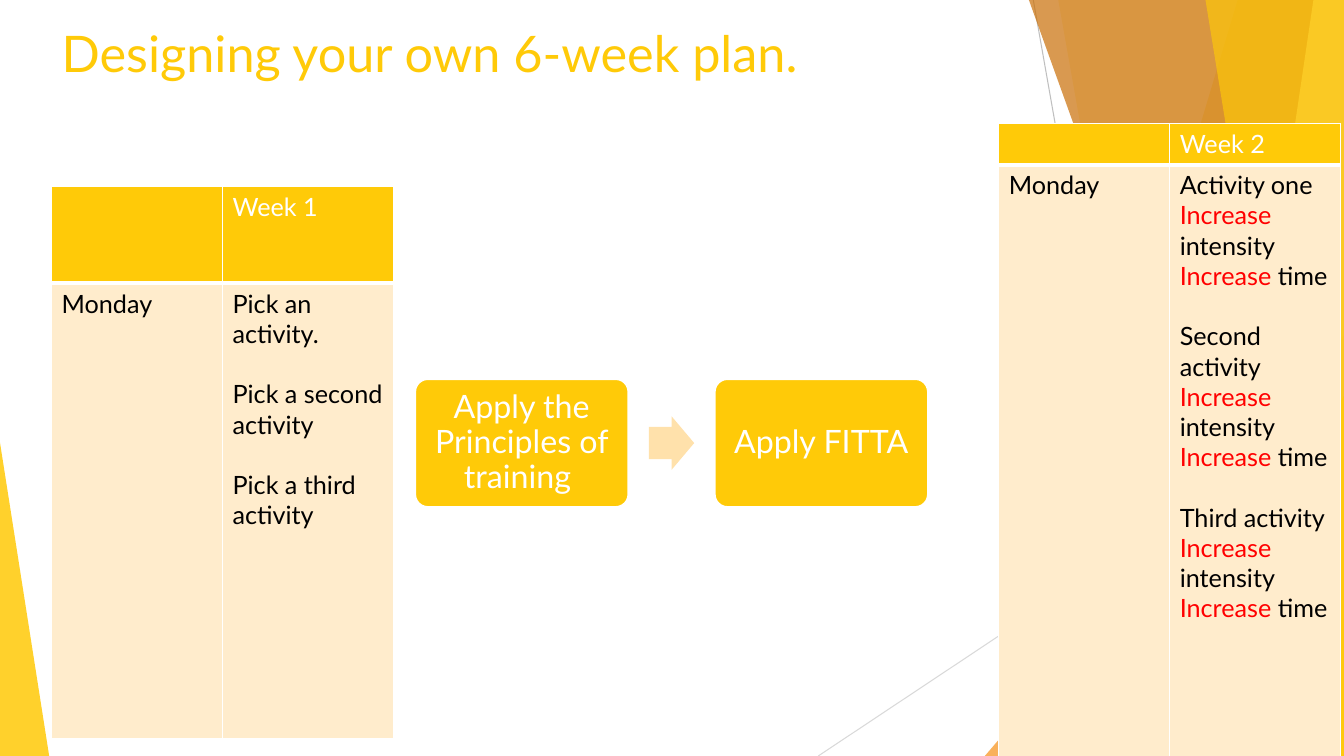
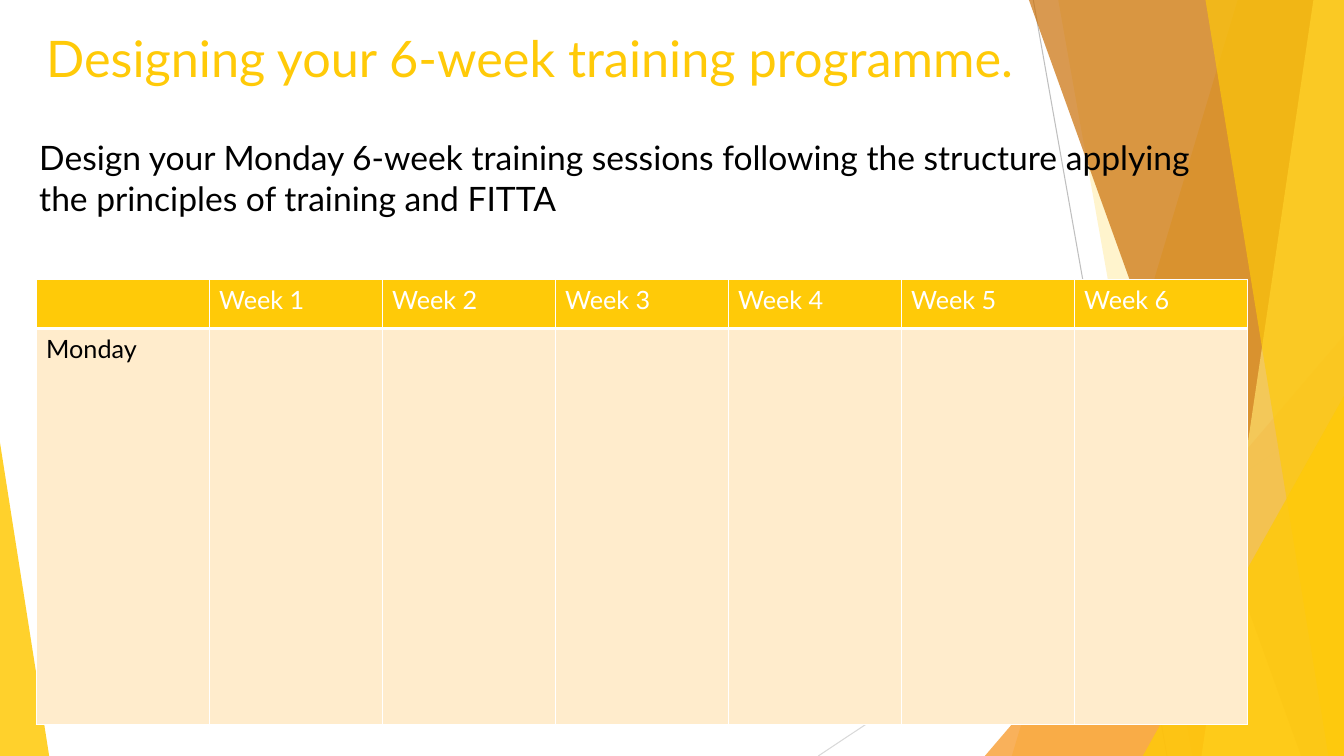
from lxml import etree
from pptx import Presentation, util as u
from pptx.dml.color import RGBColor
from pptx.enum import shapes, text
from pptx.oxml.ns import qn

Cm, Pt = u.Cm, u.Pt
WIDTH, HEIGHT = 33.87, 19.05
FONT = "Lato"
HIGHLIGHT = "Increase"
GOLD = RGBColor(0xFF, 0xCA, 0x08)
PALE_GOLD = RGBColor(0xFF, 0xDF, 0x6B)
ORANGE = RGBColor(0xF8, 0x93, 0x1D)
BROWN = RGBColor(0xCA, 0x6F, 0x06)
CREAM = RGBColor(0xFF, 0xEC, 0xCC)
PEACH = RGBColor(0xFF, 0xE1, 0xAB)
GREY = RGBColor(0xBF, 0xBF, 0xBF)
LIGHT_GREY = RGBColor(0xD9, 0xD9, 0xD9)
RED = RGBColor(0xFF, 0x00, 0x00)
BLACK = RGBColor(0x00, 0x00, 0x00)
WHITE = RGBColor(0xFF, 0xFF, 0xFF)

INCREASES = ["Increase intensity", "Increase time"]
WEEK_1 = [["Pick an activity."], ["Pick a second activity"], ["Pick a third activity"]]
WEEK_2 = [[name] + INCREASES for name in ("Activity one", "Second activity", "Third activity")]


def set_font(p, size, color):
    """Give a paragraph the deck's typeface with a size and colour."""
    p.font.name, p.font.size = FONT, Pt(size)
    p.font.color.rgb = color


def paint(shape, color, alpha=100):
    """Fill a shape with a flat colour, without outline or shadow."""
    shape.shadow.inherit = False
    shape.fill.solid()
    shape.fill.fore_color.rgb = color
    shape.line.fill.background()
    if alpha < 100:
        clr = shape.element.spPr.find(".//" + qn("a:srgbClr"))
        etree.SubElement(clr, qn("a:alpha")).set("val", str(alpha * 1000))


def add_thin_line(tree, start, end, color):
    """Draw a hairline between two points."""
    line = tree.add_connector(shapes.MSO_CONNECTOR.STRAIGHT, *map(Cm, start + end))
    line.line.color.rgb, line.line.width = color, Pt(0.75)
    etree.SubElement(line.element.spPr, qn("a:effectLst"))


def add_facet(tree, top_x, bottom_x, color, alpha):
    """Draw a slanted band that reaches the right edge of the slide."""
    pen = tree.build_freeform(Cm(top_x), 0)
    corners = [(WIDTH, 0), (WIDTH, HEIGHT), (bottom_x, HEIGHT)]
    pen.add_line_segments([(Cm(x), Cm(y)) for x, y in corners], close=True)
    paint(pen.convert_to_shape(), color, alpha)


def add_wedge(tree, x, y, w, apex, color, alpha):
    """Draw a right triangle standing on the bottom edge."""
    wedge = tree.add_shape(shapes.MSO_SHAPE.ISOSCELES_TRIANGLE,
                           Cm(x), Cm(y), Cm(w), Cm(HEIGHT - y))
    wedge.adjustments[0] = apex
    paint(wedge, color, alpha)


def add_backdrop(s):
    """Build the faceted backdrop and hand it to the slide's layout."""
    group = s.shapes.add_group_shape()
    tree = group.shapes
    add_thin_line(tree, (26.04, 0), (29.41, HEIGHT), GREY)
    add_thin_line(tree, (WIDTH, 10.24), (20.62, HEIGHT), LIGHT_GREY)
    add_facet(tree, 31.19, 25.5, GOLD, 30)
    add_facet(tree, 26.67, 30.05, GOLD, 20)
    add_wedge(tree, 24.82, 8.46, 9.05, 1, ORANGE, 72)
    add_facet(tree, 25.93, 32.79, BROWN, 70)
    add_facet(tree, 33.1, 30.28, PALE_GOLD, 70)
    add_facet(tree, 30.38, 33.48, GOLD, 65)
    add_wedge(tree, 28.8, 9.98, 5.07, 1, GOLD, 80)
    add_wedge(tree, 0, 11.15, 1.24, 0, GOLD, 85)
    for number, props in enumerate(group.element.iter(qn("p:cNvPr")), 20):
        props.set("id", str(number))
    s.slide_layout.shapes.element.append(group.element)


def set_title(s, title, x, y, w, h=3.66):
    """Place and format the title placeholder."""
    sp = s.shapes.title
    sp.left, sp.top, sp.width, sp.height = map(Cm, (x, y, w, h))
    tf = sp.text_frame
    tf.text = title
    tf.auto_size = text.MSO_AUTO_SIZE.NONE
    tf.vertical_anchor = text.MSO_ANCHOR.TOP
    p = tf.paragraphs[0]
    p.alignment = text.PP_ALIGN.LEFT
    set_font(p, 36, GOLD)


def set_borders(cell, **widths):
    """Put white borders of the given point widths on a cell."""
    tc_pr = cell._tc.get_or_add_tcPr()
    for i, side in enumerate("LRTB"):
        ln = etree.Element(qn("a:ln" + side), w=str(Pt(widths.get(side, 1))))
        fill = etree.SubElement(ln, qn("a:solidFill"))
        etree.SubElement(fill, qn("a:srgbClr")).set("val", str(WHITE))
        tc_pr.insert(i, ln)


def write_cell(cell, groups, color):
    """Write groups of lines, one line apart, with highlighted openings."""
    tf = cell.text_frame
    p = tf.paragraphs[0]
    for g, lines in enumerate(groups):
        for i, line in enumerate(lines):
            if g or i:
                p = tf.add_paragraph()
            if g and not i:
                p.space_before = Pt(21.6)
            set_font(p, 18, color)
            if line.startswith(HIGHLIGHT):
                r = p.add_run()
                r.text = HIGHLIGHT
                r.font.color.rgb = RED
            p.add_run().text = line.removeprefix(HIGHLIGHT)


def add_plan(s, x, y, col_w, row_heights, weeks, sessions):
    """Add a Monday plan with one column for each week."""
    n = len(weeks) + 1
    table = s.shapes.add_table(2, n, Cm(x), Cm(y), Cm(col_w * n), Cm(sum(row_heights))).table
    for col in table.columns:
        col.width = Cm(col_w)
    contents = [[[]] + [[[week]] for week in weeks], [[["Monday"]]] + sessions]
    styles = [(GOLD, WHITE, {"B": 3}), (CREAM, BLACK, {"T": 3})]
    for row, height, groups, (fill, color, edges) in zip(table.rows, row_heights, contents, styles):
        row.height = Cm(height)
        for cell, group in zip(row.cells, groups):
            cell.fill.solid()
            cell.fill.fore_color.rgb = fill
            set_borders(cell, **edges)
            write_cell(cell, group, color)


def add_flow(s, x, y, w, h, steps):
    """Add two rounded steps with an arrow centred between them."""
    step_w, arrow_w, arrow_h = 5.38, 1.14, 1.35
    for left, step in zip((x, x + w - step_w), steps):
        sp = s.shapes.add_shape(shapes.MSO_SHAPE.ROUNDED_RECTANGLE,
                                Cm(left), Cm(y), Cm(step_w), Cm(h))
        sp.adjustments[0] = 0.1
        paint(sp, GOLD)
        sp.line.color.rgb, sp.line.width = WHITE, Pt(1.5)
        tf = sp.text_frame
        tf.text, tf.word_wrap = step, True
        tf.vertical_anchor = text.MSO_ANCHOR.MIDDLE
        tf.margin_left = tf.margin_right = tf.margin_top = tf.margin_bottom = Cm(0.33)
        p = tf.paragraphs[0]
        p.alignment, p.line_spacing = text.PP_ALIGN.CENTER, 0.9
        set_font(p, 23, WHITE)
    arrow = s.shapes.add_shape(shapes.MSO_SHAPE.RIGHT_ARROW,
                               Cm(x + (w - arrow_w) / 2), Cm(y + (h - arrow_h) / 2),
                               Cm(arrow_w), Cm(arrow_h))
    arrow.adjustments[0], arrow.adjustments[1] = 0.6, 0.5
    paint(arrow, PEACH)


def add_task(s, x, y, w, h, task):
    """Add the task instruction."""
    tf = s.shapes.add_textbox(Cm(x), Cm(y), Cm(w), Cm(h)).text_frame
    tf.text, tf.word_wrap = task, True
    set_font(tf.paragraphs[0], 24, BLACK)


def build_example(s):
    """Fill the slide that shows how week 1 grows into week 2."""
    set_title(s, "Designing your own 6-week plan.", 1.3, 0.43, 23.88)
    add_plan(s, 1.3, 4.7, 4.31, (2.44, 11.48), ["Week 1"], [WEEK_1])
    add_flow(s, 10.46, 9.55, 12.93, 3.23, ["Apply the Principles of training ", "Apply FITTA"])
    add_plan(s, 25.17, 3.12, 4.31, (1.02, 14.91), ["Week 2"], [WEEK_2])


def build_programme(s):
    """Fill the slide with the empty six-week programme."""
    set_title(s, "Designing your 6-week training programme.", 0.91, 0.56, 25.98)
    weeks = [f"Week {i}" for i in range(1, 7)]
    add_plan(s, 0.91, 7.04, 4.36, (1.24, 9.98), weeks, [[]] * len(weeks))
    add_task(s, 0.74, 3.33, 29.67, 2.31,
             "Design your Monday 6-week training sessions following the structure "
             "applying the principles of training and FITTA")


def main():
    """Build and save the presentation."""
    prs = Presentation()
    prs.slide_width, prs.slide_height = Cm(WIDTH), Cm(HEIGHT)
    layout = prs.slide_layouts[5]
    example, programme = (prs.slides.add_slide(layout) for _ in range(2))
    add_backdrop(example)
    build_example(example)
    build_programme(programme)
    prs.save("out.pptx")


if __name__ == "__main__":
    main()
